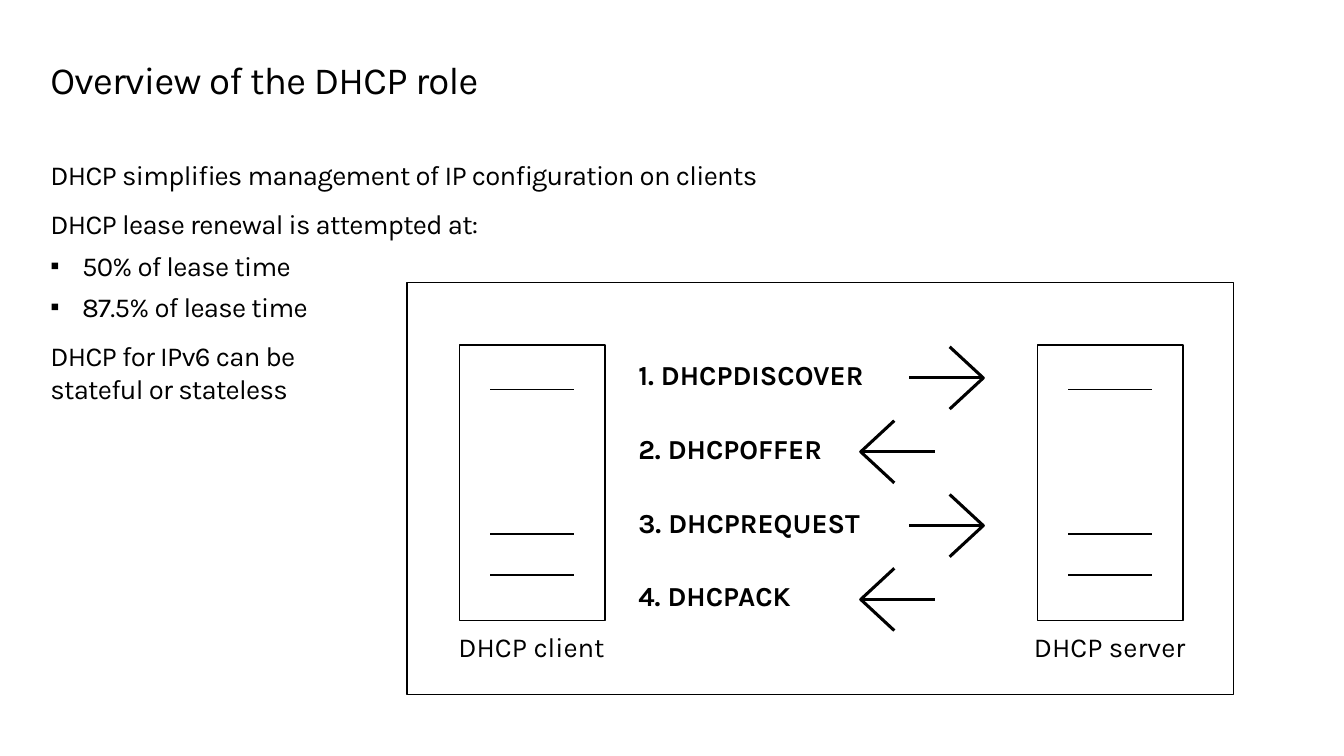
from lxml.etree import SubElement
from pptx import Presentation
from pptx.dml.color import RGBColor
from pptx.enum.shapes import MSO_SHAPE as Shape
from pptx.enum.text import MSO_ANCHOR as Anchor, PP_ALIGN as Align
from pptx.oxml.ns import qn
from pptx.util import Inches, Pt

BLACK = RGBColor(0, 0, 0)
WHITE = RGBColor(255, 255, 255)
FONT = "Karla"
CELL = Inches(0.1)
COLUMNS, ROWS = 136, 76.5
MARGIN = 5.1

COMPUTER_WIDTH, COMPUTER_HEIGHT, COMPUTER_TOP = 14.7, 27.9, 34.9
SLOT_INSET = 3.1
SLOT_ROWS = (4.5, 19.1, 23.3)
COMPUTERS = (("DHCP client", 46.5, 43.1), ("DHCP server", 105, 101.6))

MESSAGE_LEFT, MESSAGE_TOP, MESSAGE_STEP = 62.6, 35.1, 7.47
LABEL_HEIGHT = 6.3
LABEL_INSETS = (2, 1.6, 2, 1.6)
MESSAGES = (
    ("1. DHCPDISCOVER", 29.4),
    ("2. DHCPOFFER", 24.7),
    ("3. DHCPREQUEST", 27.9),
    ("4. DHCPACK", 24.7),
)
ARROW_LENGTH, ARROW_HEAD = 7.5, 3.4
RIGHT_ARROW_TAIL, LEFT_ARROW_TIP = 92, 87.1

BODY = (
    ("DHCP simplifies management of IP configuration on clients", False),
    ("DHCP lease renewal is attempted at:", False),
    ("50% of lease time", True),
    ("87.5% of lease time", True),
    ("DHCP for IPv6 can be\nstateful or stateless", False),
)


def cells(count):
    return round(count * CELL)


def add_box(page, left, top, width, height, insets):
    box = page.shapes.add_textbox(*map(cells, (left, top, width, height)))
    frame = box.text_frame
    frame.word_wrap = True
    frame.vertical_anchor = Anchor.TOP
    frame.margin_left, frame.margin_top, frame.margin_right, frame.margin_bottom = map(cells, insets)
    return frame


def write(para, text, size=20, bold=False, align=Align.LEFT, line=1.0, before=0, after=0, tracking=0):
    para.text = text
    para.alignment = align
    para.line_spacing = line
    para.space_before = Pt(before)
    para.space_after = Pt(after)
    for span in para.runs:
        span.font.name = FONT
        span.font.size = Pt(size)
        span.font.bold = bold
        span.font.color.rgb = BLACK
        if tracking:
            span.font._element.set("spc", str(round(tracking * 100)))


def add_bullet(para):
    para.level = 1
    properties = para._p.get_or_add_pPr()
    properties.set("marL", str(cells(3.2)))
    properties.set("indent", str(cells(-3.2)))
    SubElement(properties, qn("a:buSzPct"), val="95000")
    SubElement(properties, qn("a:buFont"), typeface="Arial")
    SubElement(properties, qn("a:buChar"), char="▪")


def add_label(page, text, left, top, width, bold=False, align=Align.LEFT):
    frame = add_box(page, left, top, width, LABEL_HEIGHT, LABEL_INSETS)
    write(frame.paragraphs[0], text, bold=bold, align=align, line=0.9, after=6)


def set_outline(shape, weight, fill=None):
    shape.shadow.inherit = False
    if fill is None:
        shape.fill.background()
    else:
        shape.fill.solid()
        shape.fill.fore_color.rgb = fill
    shape.line.color.rgb = BLACK
    shape.line.width = Pt(weight)


def add_outline(page, strokes, weight, fill=None):
    strokes = [[(cells(x), cells(y)) for x, y in stroke] for stroke in strokes]
    builder = page.shapes.build_freeform(*strokes[0][0])
    for index, stroke in enumerate(strokes):
        if index:
            builder.move_to(*stroke[0])
        builder.add_line_segments(stroke[1:], close=False)
    set_outline(builder.convert_to_shape(), weight, fill)


def add_computer(page, left):
    top, right, bottom = COMPUTER_TOP, left + COMPUTER_WIDTH, COMPUTER_TOP + COMPUTER_HEIGHT
    case = [(left, top), (right, top), (right, bottom), (left, bottom), (left, top)]
    slots = [
        [(left + SLOT_INSET, top + row), (right - SLOT_INSET, top + row)]
        for row in SLOT_ROWS
    ]
    add_outline(page, [case, *slots], 1.25, WHITE)


def add_arrow(page, tail, tip, top):
    middle = top + LABEL_HEIGHT / 2
    barb = tip - ARROW_HEAD if tip > tail else tip + ARROW_HEAD
    head = [(barb, top), (tip, middle), (barb, top + LABEL_HEIGHT)]
    add_outline(page, [head, [(tip, middle), (tail, middle)]], 2.25)


def add_body(page):
    frame = add_box(page, MARGIN, 16, 126.2, 55.6, (0, 0, 1, 0.5))
    for index, (text, bulleted) in enumerate(BODY):
        para = frame.add_paragraph() if index else frame.paragraphs[0]
        write(para, text, before=6 if bulleted else 12, tracking=-0.5)
        if bulleted:
            add_bullet(para)


def add_exchange(page):
    panel = page.shapes.add_shape(Shape.RECTANGLE, *map(cells, (41.2, 28.6, 83.6, 41.7)))
    set_outline(panel, 1)
    for name, left, label_left in COMPUTERS:
        add_computer(page, left)
        add_label(page, name, label_left, 62.6, 21.4, align=Align.CENTER)
    for index, (text, width) in enumerate(MESSAGES):
        top = MESSAGE_TOP + index * MESSAGE_STEP
        add_label(page, text, MESSAGE_LEFT, top, width, bold=True)
        if index % 2 == 0:
            add_arrow(page, RIGHT_ARROW_TAIL, RIGHT_ARROW_TAIL + ARROW_LENGTH, top)
        else:
            add_arrow(page, LEFT_ARROW_TIP + ARROW_LENGTH, LEFT_ARROW_TIP, top)


def main():
    deck = Presentation()
    deck.slide_width, deck.slide_height = cells(COLUMNS), cells(ROWS)
    page = deck.slides.add_slide(deck.slide_layouts[6])
    title = add_box(page, MARGIN, 6.2, 126.1, 4.5, (0, 0, 1, 0))
    write(title.paragraphs[0], "Overview of the DHCP role", size=28, line=0.9, tracking=-0.5)
    add_body(page)
    add_exchange(page)
    deck.save("out.pptx")


if __name__ == "__main__":
    main()
